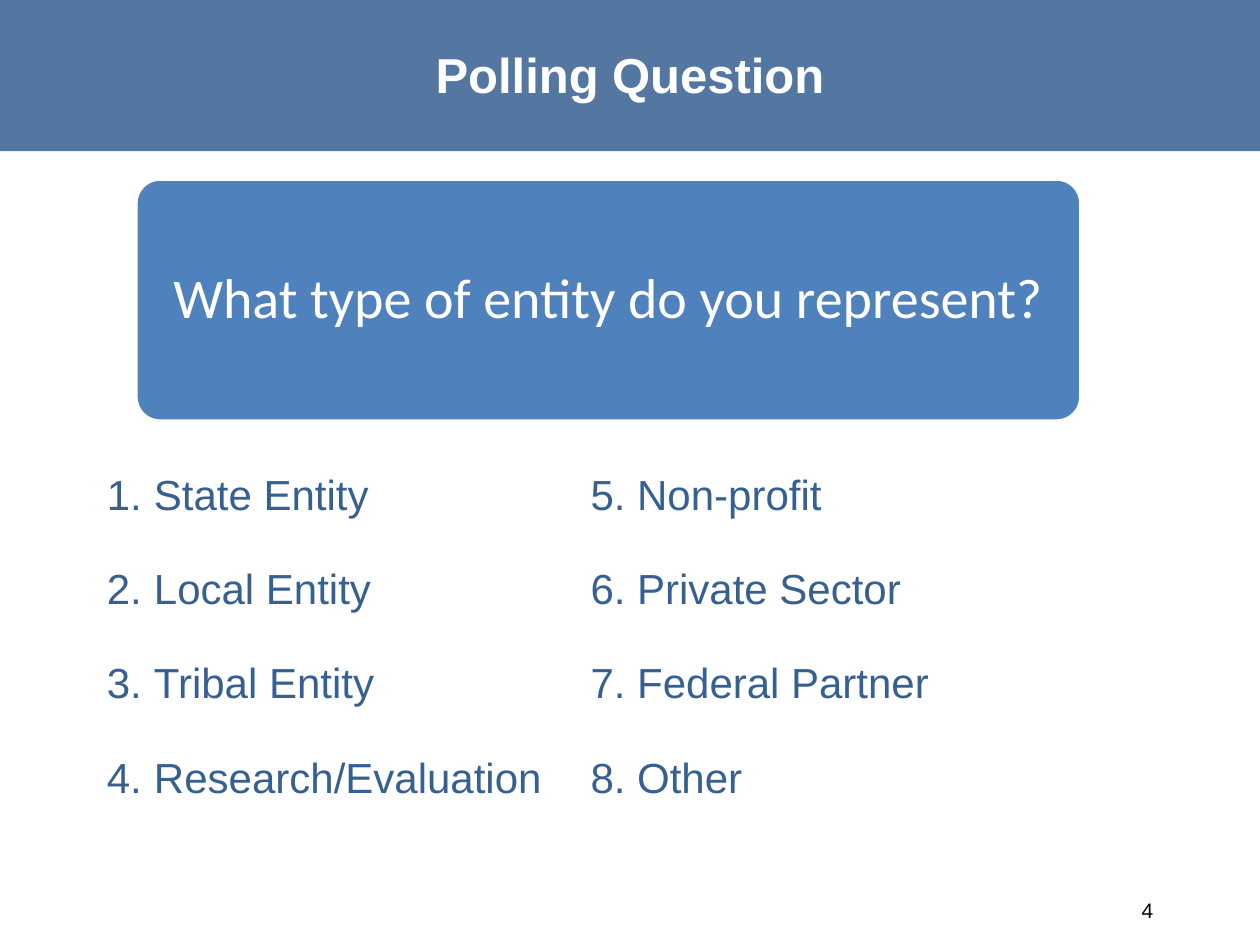
import pptx
import pptx.dml.color
import pptx.enum.shapes
import pptx.enum.text
import pptx.oxml
import pptx.oxml.ns
import pptx.util
from pptx.util import Cm, Pt

COLORS = {"navy": "376092", "blue": "4F81BD", "white": "FFFFFF", "black": "000000"}
ALIGN = pptx.enum.text.PP_ALIGN
SHAPES = pptx.enum.shapes.MSO_SHAPE
ENTITIES = [
    "State Entity", "Local Entity", "Tribal Entity", "Research/Evaluation",
    "Non-profit", "Private Sector", "Federal Partner", "Other",
]


def rgb(name):
    return pptx.dml.color.RGBColor.from_string(COLORS[name])


def set_values(target, values):
    for name, value in values.items():
        setattr(target, name, value)


def place(box, left, top, width, height):
    set_values(box, dict(left=Cm(left), top=Cm(top), width=Cm(width), height=Cm(height)))


def format_paragraph(para, color, size, font="Arial", bold=False, **layout):
    set_values(para, layout)
    set_values(para.font, dict(name=font, size=Pt(size), bold=bold))
    para.font.color.rgb = rgb(color)


def write_line(box, text, color, size, **options):
    """Fill a box with one vertically centred paragraph."""
    frame = box.text_frame
    set_values(frame, dict(word_wrap=True, text=text,
                           vertical_anchor=pptx.enum.text.MSO_ANCHOR.MIDDLE))
    format_paragraph(frame.paragraphs[0], color, size, **options)


def add_block(page, kind, color, *position):
    block = page.shapes.add_shape(kind, *map(Cm, position))
    block.shadow.inherit = False
    block.fill.solid()
    block.fill.fore_color.rgb = rgb(color)
    block.line.fill.background()
    return block


def add_title(page, text):
    """Write the title over a slightly transparent band."""
    title = page.shapes.title
    place(title, 0, 0, 25.4, 2.97)
    write_line(title, text, "white", 28, bold=True, alignment=ALIGN.CENTER)
    band = add_block(page, SHAPES.RECTANGLE, "navy", -0.02, 0, 25.42, 3.05)
    tint = band.element.find(".//" + pptx.oxml.ns.qn("a:srgbClr"))
    tint.append(pptx.oxml.parse_xml(
        f'<a:alpha {pptx.oxml.ns.nsdecls("a")} val="85000"/>'))
    title.element.addprevious(band.element)


def add_question(page, text):
    card = add_block(page, SHAPES.ROUNDED_RECTANGLE, "blue", 2.74, 3.61, 19.05, 4.88)
    card.adjustments[0] = 0.1
    card.line.color.rgb = rgb("white")
    card.line.width = Pt(2)
    write_line(card, text, "white", 32, font="Calibri",
               alignment=ALIGN.CENTER, line_spacing=0.9)


def number_paragraph(para, indent, tab):
    """Add automatic numbering, a hanging indent and one tab stop."""
    properties = para._p.get_or_add_pPr()
    properties.set("marL", str(Cm(indent)))
    properties.set("indent", str(-Cm(indent)))
    namespace = pptx.oxml.ns.nsdecls("a")
    for xml in (
        f'<a:buFont {namespace} typeface="+mj-lt"/>',
        f'<a:buAutoNum {namespace} type="arabicPeriod"/>',
        f'<a:tabLst {namespace}><a:tab pos="{Cm(tab)}" algn="l"/></a:tabLst>',
    ):
        properties.append(pptx.oxml.parse_xml(xml))


def add_answers(page, answers):
    """List the answers in two columns, the second set at a tab stop."""
    body = page.placeholders[1]
    place(body, 1.9, 9.32, 18.85, 8.81)
    frame = body.text_frame
    frame.auto_size = pptx.enum.text.MSO_AUTO_SIZE.NONE
    half = len(answers) // 2
    for row, (first, second) in enumerate(zip(answers[:half], answers[half:])):
        para = frame.add_paragraph() if row else frame.paragraphs[0]
        para.add_run().text = f"{first}\t{half + row + 1}. {second}"
        number_paragraph(para, indent=0.95, tab=9.75)
        format_paragraph(para, "navy", 24, space_before=Pt(0), space_after=Pt(25))


def add_page_number(page, number):
    box = page.shapes.add_textbox(*map(Cm, (17.58, 17.83, 5.92, 1.02)))
    write_line(box, str(number), "black", 12, alignment=ALIGN.RIGHT)


def main():
    deck = pptx.Presentation()
    set_values(deck, dict(slide_width=Cm(25.4), slide_height=Cm(19.05)))
    page = deck.slides.add_slide(deck.slide_layouts[1])
    add_title(page, "Polling Question")
    add_question(page, "What type of entity do you represent?")
    add_answers(page, ENTITIES)
    add_page_number(page, 4)
    deck.save("out.pptx")


if __name__ == "__main__":
    main()
